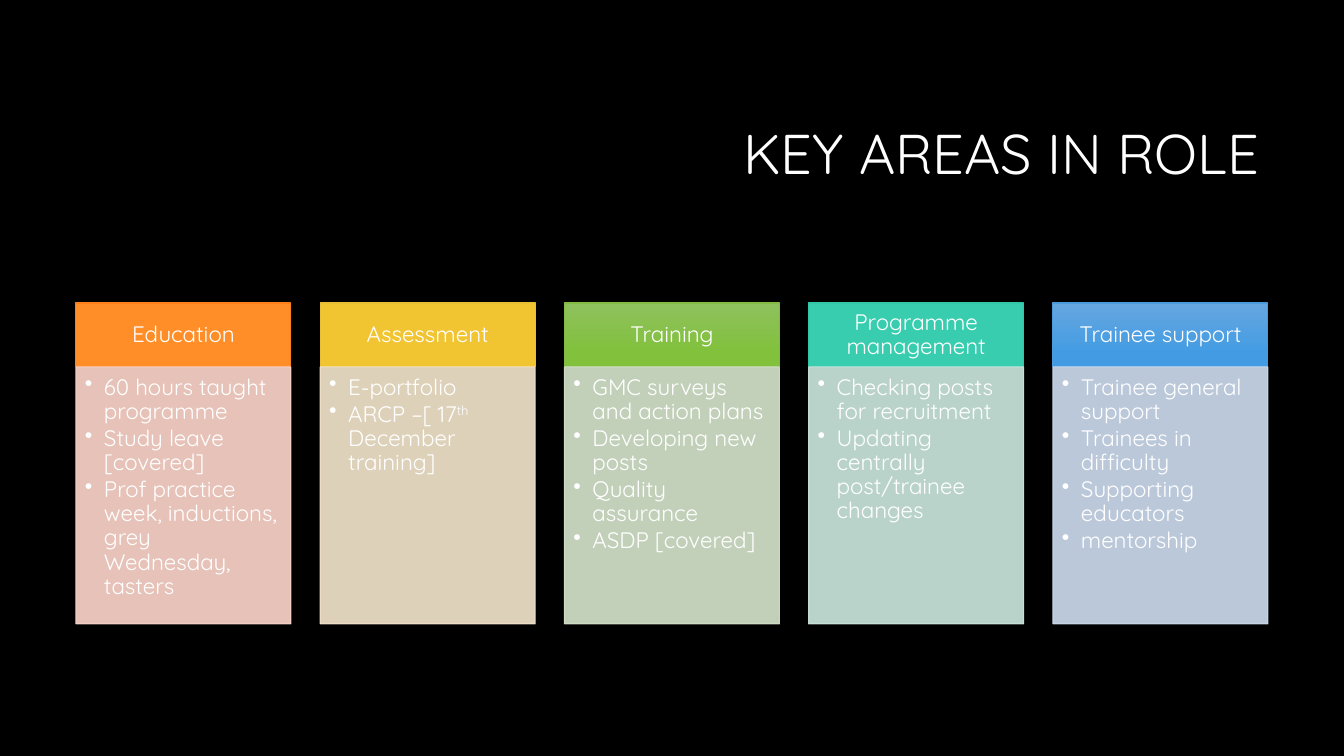
from lxml import etree
from pptx import Presentation, util as u
from pptx.dml.color import RGBColor
from pptx.enum import shapes, text
from pptx.oxml import ns

SCALE = 914400 / 100.8
FONT = "Quicksand"
COLORS = {"background": "000000", "text": "FFFFFF"}
AREAS = [
    {
        "name": "Education",
        "head": ["FF8E28"], "edge": "FE801A", "body": "FFD8CD",
        "items": [
            ["60 hours taught programme"],
            ["Study leave [covered]"],
            ["Prof practice week, inductions, grey Wednesday, tasters"],
        ],
    },
    {
        "name": "Assessment",
        "head": ["F1C431"], "edge": "E9BF35", "body": "F7E8CE",
        "items": [["E-portfolio"], ["ARCP –[ 17", "th", " December training]"]],
    },
    {
        "name": "Training",
        "head": ["8FC15E", "81C13C"], "edge": "81BB42", "body": "D8E7CF",
        "items": [
            ["GMC surveys and action plans"],
            ["Developing new posts"],
            ["Quality assurance"],
            ["ASDP [covered]"],
        ],
    },
    {
        "name": "Programme management",
        "head": ["37CDAE"], "edge": "32C7A9", "body": "CEEBE2",
        "items": [
            ["Checking posts for recruitment"],
            ["Updating centrally post/trainee changes"],
        ],
    },
    {
        "name": "Trainee support",
        "head": ["66A7E0", "439CE3"], "edge": "4A9BDC", "body": "D0DEF2",
        "items": [
            ["Trainee general support"],
            ["Trainees in difficulty"],
            ["Supporting educators"],
            ["mentorship"],
        ],
    },
]


def px(length):
    return u.Emu(round(length * SCALE))


def rgb(value):
    return RGBColor.from_string(value)


def add_run(paragraph, words, size):
    run = paragraph.add_run()
    run.text = words
    run.font.name = FONT
    run.font.size = u.Pt(size)
    run.font.color.rgb = rgb(COLORS["text"])
    return run


def set_frame(frame, insets, anchor):
    frame.word_wrap = True
    frame.vertical_anchor = anchor
    frame.margin_left, frame.margin_top, frame.margin_right, frame.margin_bottom = map(px, insets)


def add_title(slide, box, words):
    frame = slide.shapes.add_textbox(*map(px, box)).text_frame
    set_frame(frame, (10, 5, 10, 5), text.MSO_ANCHOR.MIDDLE)
    paragraph = frame.paragraphs[0]
    paragraph.alignment = text.PP_ALIGN.RIGHT
    paragraph.line_spacing = 0.9
    add_run(paragraph, words, 40)


def add_panel(slide, box, fills, edge):
    shape = slide.shapes.add_shape(shapes.MSO_SHAPE.RECTANGLE, *map(px, box))
    shape.shadow.inherit = False
    if len(fills) == 1:
        shape.fill.solid()
        shape.fill.fore_color.rgb = rgb(fills[0])
    else:
        shape.fill.gradient()
        shape.fill.gradient_angle = 270
        for stop, color, position in zip(shape.fill.gradient_stops, fills, (0, 0.78)):
            stop.color.rgb = rgb(color)
            stop.position = position
    shape.line.color.rgb = rgb(edge)
    shape.line.width = u.Pt(0.75)
    return shape


def add_heading(slide, box, area):
    frame = add_panel(slide, box, area["head"], area["edge"]).text_frame
    set_frame(frame, (12, 7, 12, 7), text.MSO_ANCHOR.MIDDLE)
    paragraph = frame.paragraphs[0]
    paragraph.alignment = text.PP_ALIGN.CENTER
    paragraph.line_spacing = 0.9
    add_run(paragraph, area["name"], 16)


def add_bullet(paragraph, parts):
    properties = paragraph._p.get_or_add_pPr()
    properties.set("marL", str(px(19)))
    properties.set("indent", str(px(-19)))
    etree.SubElement(properties, ns.qn("a:buChar")).set("char", "•")
    paragraph.level = 1
    paragraph.alignment = text.PP_ALIGN.LEFT
    paragraph.line_spacing = 0.9
    paragraph.space_after = u.Pt(2)
    for index, words in enumerate(parts):
        run = add_run(paragraph, words, 16)
        if index == 1:
            run.font._element.set("baseline", "30000")


def add_details(slide, box, area):
    shape = add_panel(slide, box, [area["body"]], area["body"])
    for color in shape._element.spPr.iter(ns.qn("a:srgbClr")):
        etree.SubElement(color, ns.qn("a:alpha")).set("val", "90000")
    frame = shape.text_frame
    set_frame(frame, (9, 9, 12, 14), text.MSO_ANCHOR.TOP)
    for index, parts in enumerate(area["items"]):
        add_bullet(frame.add_paragraph() if index else frame.paragraphs[0], parts)


def add_columns(slide, box, areas, column_width=215, heading_height=64):
    left, top, width, height = box
    pitch = (width - column_width) / (len(areas) - 1)
    for index, area in enumerate(areas):
        x = left + index * pitch
        add_heading(slide, (x, top, column_width, heading_height), area)
        details = (x, top + heading_height, column_width, height - heading_height)
        add_details(slide, details, area)


def main():
    presentation = Presentation()
    presentation.slide_width, presentation.slide_height = px(1344), px(756)
    slide = presentation.slides.add_slide(presentation.slide_layouts[6])
    slide.background.fill.solid()
    slide.background.fill.fore_color.rgb = rgb(COLORS["background"])
    add_title(slide, (320, 85, 949, 142), "KEY AREAS IN ROLE")
    add_columns(slide, (76, 303, 1192, 321), AREAS)
    presentation.save("out.pptx")


if __name__ == "__main__":
    main()
